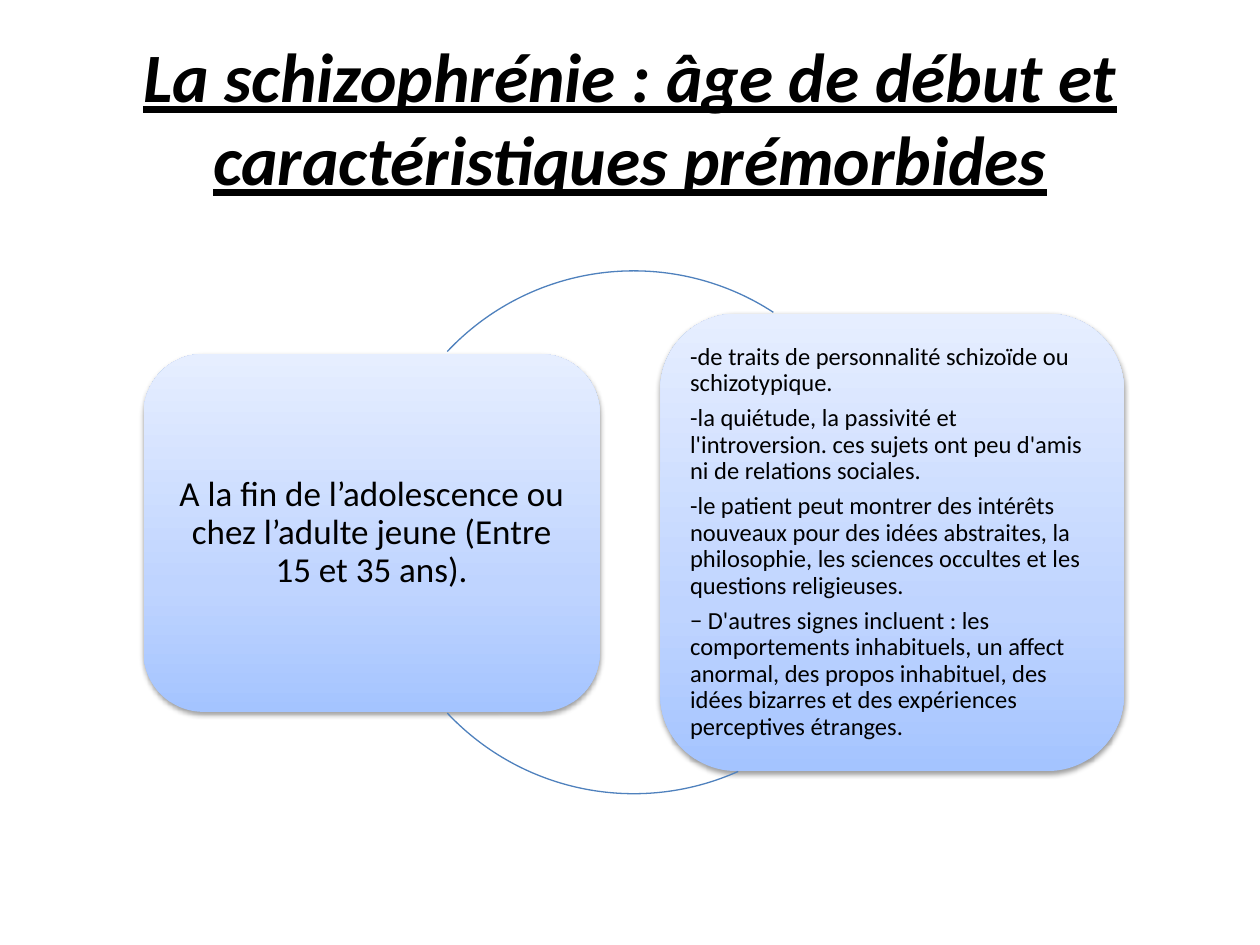
import copy

import lxml.etree
import pptx
import pptx.dml.color
import pptx.enum.shapes
import pptx.enum.text
import pptx.oxml
import pptx.oxml.ns
import pptx.util

Inches = pptx.util.Inches
Pt = pptx.util.Pt
RGB = pptx.dml.color.RGBColor
SHAPE = pptx.enum.shapes.MSO_SHAPE
ALIGN = pptx.enum.text.PP_ALIGN
MIDDLE = pptx.enum.text.MSO_ANCHOR.MIDDLE

BLACK = RGB(0x00, 0x00, 0x00)
BLUE = RGB(0x4F, 0x81, 0xBD)
DEEP = RGB(0xA4, 0xC4, 0xFF)
SOFT = RGB(0xBF, 0xD4, 0xFF)
PALE = RGB(0xE6, 0xEE, 0xFF)

SHADOW = (
    f'<a:effectLst {pptx.oxml.ns.nsdecls("a")}>'
    f'<a:outerShdw blurRad="{Pt(3.1)}" dist="{Pt(1.6)}" dir="5400000" rotWithShape="0">'
    '<a:srgbClr val="000000"><a:alpha val="38000"/></a:srgbClr>'
    '</a:outerShdw></a:effectLst>'
)

TITLE = ["La schizophrénie : âge de début et", "caractéristiques prémorbides"]
ONSET = ["A la fin de l’adolescence ou chez l’adulte jeune (Entre 15 et 35 ans)."]
TRAITS = [
    "-de traits de personnalité schizoïde ou schizotypique.",
    "-la quiétude, la passivité et l'introversion. ces sujets ont peu d'amis "
    "ni de relations sociales.",
    "-le patient peut montrer des intérêts nouveaux pour des idées abstraites, "
    "la philosophie, les sciences occultes et les questions religieuses.",
    "− D'autres signes incluent : les comportements inhabituels, un affect "
    "anormal, des propos inhabituel, des idées bizarres et des expériences "
    "perceptives étranges.",
]


class Deck:
    font = "Calibri"

    def __init__(self):
        self.file = pptx.Presentation()
        self.file.slide_width = Inches(10)
        self.file.slide_height = Inches(7.5)
        self.slide = self.file.slides.add_slide(self.file.slide_layouts[5])

    def run(self, para, text, size):
        run = para.add_run()
        run.text = text
        run.font.name = self.font
        run.font.size = Pt(size)
        run.font.color.rgb = BLACK
        return run

    def title(self, lines, size):
        title = self.slide.shapes.title
        title.left, title.top = Inches(0.5), Inches(0.3)
        title.width, title.height = Inches(9), Inches(1.25)
        title.text_frame.vertical_anchor = MIDDLE
        para = title.text_frame.paragraphs[0]
        para.alignment = ALIGN.CENTER
        for i, line in enumerate(lines):
            if i:
                para.add_line_break()
            font = self.run(para, line, size).font
            font.bold = font.italic = font.underline = True

    def arc(self, left, top, size, start, end):
        arc = self.slide.shapes.add_shape(
            SHAPE.ARC, Inches(left), Inches(top), Inches(size), Inches(size))
        # One adjustment unit is 100000 sixty-thousandths of a degree
        arc.adjustments[0] = start * 0.6
        arc.adjustments[1] = end * 0.6
        arc.shadow.inherit = False
        arc.fill.background()
        arc.line.color.rgb = BLUE
        arc.line.width = Pt(0.75)

    def shade(self, card):
        card.fill.gradient()
        card.fill.gradient_angle = 90
        first = card.fill._xPr.find(".//" + pptx.oxml.ns.qn("a:gs"))
        first.addnext(copy.deepcopy(first))
        stops = zip(card.fill.gradient_stops, (0, 0.35, 1), (DEEP, SOFT, PALE))
        for stop, place, color in stops:
            stop.position = place
            stop.color.rgb = color
        card.line.fill.background()
        card._element.spPr.append(pptx.oxml.parse_xml(SHADOW))

    def card(self, left, top, width, height, texts, size, inset, align):
        card = self.slide.shapes.add_shape(
            SHAPE.ROUNDED_RECTANGLE,
            Inches(left), Inches(top), Inches(width), Inches(height))
        self.shade(card)
        frame = card.text_frame
        frame.word_wrap = True
        frame.vertical_anchor = MIDDLE
        frame.margin_left = frame.margin_right = Inches(inset)
        frame.margin_top = frame.margin_bottom = Inches(inset)
        for i, text in enumerate(texts):
            para = frame.add_paragraph() if i else frame.paragraphs[0]
            para.alignment = align
            para.line_spacing = 0.9
            para.space_after = Pt(size * 0.35)
            self.run(para, text, size)


def main():
    deck = Deck()
    deck.title(TITLE, 39.6)

    # Left card, upper arc, right card, lower arc
    deck.card(1.14, 2.81, 3.62, 2.84, ONSET, 20, 0.08, ALIGN.CENTER)
    deck.arc(3, 2.15, 4.06, 223.2, 303.1)
    deck.card(5.24, 2.49, 3.68, 3.63, TRAITS, 14, 0.06, ALIGN.LEFT)
    deck.arc(3, 2.24, 4.06, 65.9, 136.8)

    deck.file.save("out.pptx")


if __name__ == "__main__":
    main()
